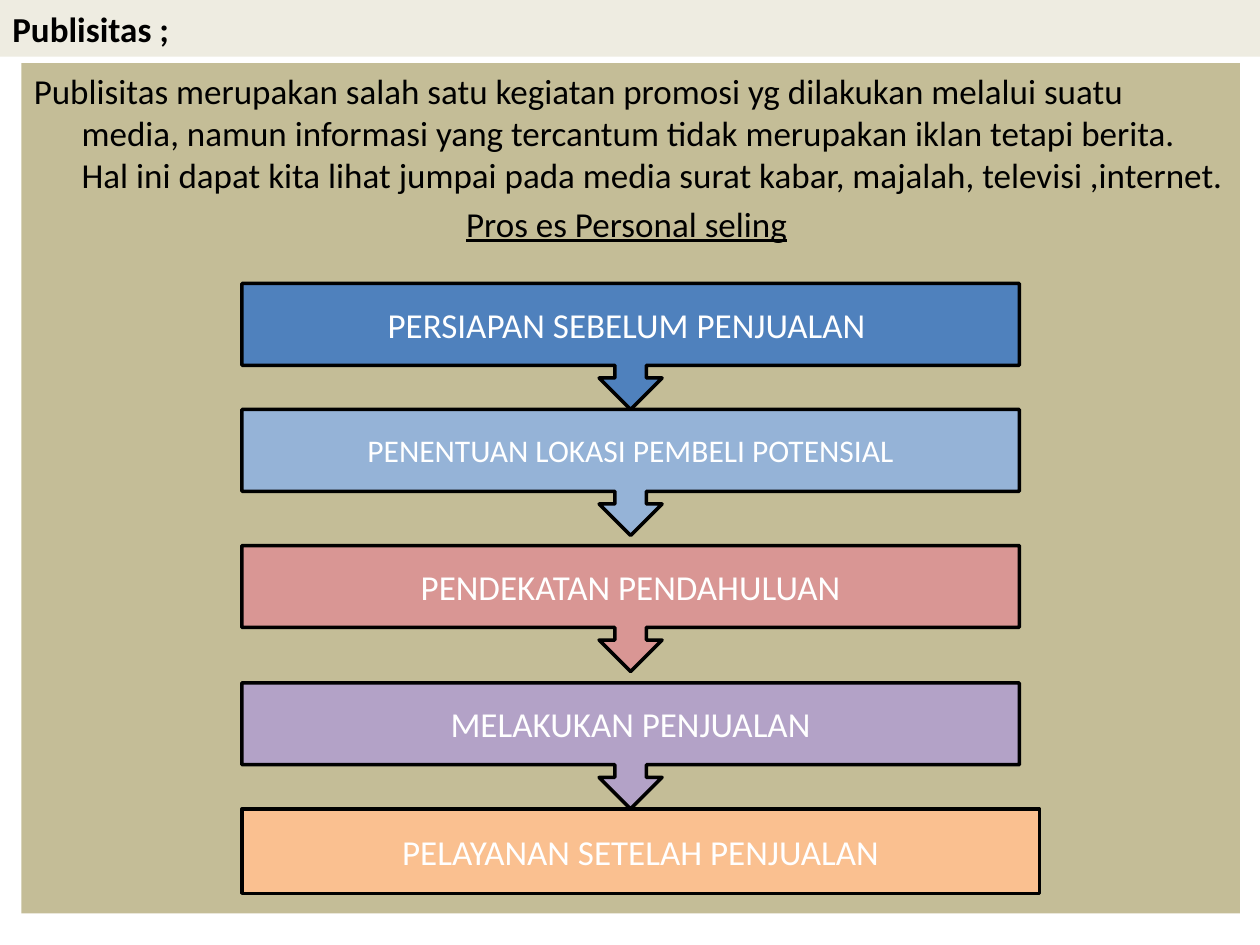
from dataclasses import dataclass

from pptx import Presentation
from pptx.dml.color import RGBColor
from pptx.enum.shapes import MSO_SHAPE
from pptx.enum.text import MSO_ANCHOR, PP_ALIGN
from pptx.util import Inches, Pt

RECTANGLE = MSO_SHAPE.RECTANGLE
CALLOUT = MSO_SHAPE.DOWN_ARROW_CALLOUT
TOP, MIDDLE = MSO_ANCHOR.TOP, MSO_ANCHOR.MIDDLE
LEFT, CENTER = PP_ALIGN.LEFT, PP_ALIGN.CENTER


@dataclass(frozen=True)
class Theme:
    font: str = "Calibri"
    text_size: int = 20
    small_size: int = 18
    outline_width: int = 2
    dark: str = "000000"
    light: str = "FFFFFF"
    title_fill: str = "EEECE1"
    body_fill: str = "C4BD97"
    step_fills: tuple = ("4F81BD", "95B3D7", "D99694", "B3A2C7", "FAC090")


class SlideBuilder:
    def __init__(self, slide, theme):
        self.slide = slide
        self.theme = theme

    def panel(self, kind, box, fill, anchor=MIDDLE, outlined=False):
        shape = self.slide.shapes.add_shape(kind, *map(Inches, box))
        shape.shadow.inherit = False
        shape.fill.solid()
        shape.fill.fore_color.rgb = RGBColor.from_string(fill)
        if outlined:
            shape.line.color.rgb = RGBColor.from_string(self.theme.dark)
            shape.line.width = Pt(self.theme.outline_width)
        else:
            shape.line.fill.background()
        shape.text_frame.word_wrap = True
        shape.text_frame.vertical_anchor = anchor
        return shape

    def add_text(self, paragraph, text, color, size=None, **font_format):
        """Add one styled run to the paragraph."""
        run = paragraph.add_run()
        run.text = text
        run.font.color.rgb = RGBColor.from_string(color)
        values = {"name": self.theme.font,
                  "size": Pt(size or self.theme.text_size), **font_format}
        for name, value in values.items():
            setattr(run.font, name, value)

    def title(self, text):
        shape = self.panel(RECTANGLE, (0, 0, 10, 0.45), self.theme.title_fill)
        paragraph = shape.text_frame.paragraphs[0]
        paragraph.alignment = LEFT
        self.add_text(paragraph, text, self.theme.dark, bold=True)

    def body(self, text, heading):
        shape = self.panel(RECTANGLE, (0.17, 0.5, 9.67, 6.75),
                           self.theme.body_fill, TOP)
        description = shape.text_frame.paragraphs[0]
        process_heading = shape.text_frame.add_paragraph()
        process_heading.space_before = Pt(4)
        for paragraph, alignment in ((description, LEFT),
                                     (process_heading, CENTER)):
            paragraph.alignment = alignment
            properties = paragraph._p.get_or_add_pPr()
            properties.set("marL", str(Inches(0.38)))
            properties.set("indent", str(Inches(-0.38)))
        self.add_text(description, text, self.theme.dark)
        self.add_text(process_heading, heading, self.theme.dark, underline=True)
        self.add_text(process_heading, " ", self.theme.dark, underline=False)

    def step(self, kind, box, fill, text, size):
        shape = self.panel(kind, box, fill, outlined=True)
        paragraph = shape.text_frame.paragraphs[0]
        paragraph.alignment = CENTER
        self.add_text(paragraph, text, self.theme.light, size)


def main():
    theme = Theme()
    presentation = Presentation()
    presentation.slide_width = Inches(10)
    presentation.slide_height = Inches(7.5)
    slide = presentation.slides.add_slide(presentation.slide_layouts[6])
    builder = SlideBuilder(slide, theme)

    builder.title("Publisitas ;")
    builder.body(
        "Publisitas merupakan salah satu kegiatan promosi yg dilakukan melalui "
        "suatu media, namun informasi yang tercantum tidak merupakan iklan "
        "tetapi berita. Hal ini dapat kita lihat jumpai pada media surat kabar, "
        "majalah, televisi ,internet.",
        "Pros es Personal seling")

    arrow_size, last_size = (6.17, 1), (6.33, 0.67)
    steps = (
        (CALLOUT, 2.25, arrow_size, "PERSIAPAN SEBELUM PENJUALAN ", theme.text_size),
        (CALLOUT, 3.25, arrow_size, "PENENTUAN LOKASI PEMBELI POTENSIAL", theme.small_size),
        (CALLOUT, 4.33, arrow_size, "PENDEKATAN PENDAHULUAN", theme.text_size),
        (CALLOUT, 5.42, arrow_size, "MELAKUKAN PENJUALAN", theme.text_size),
        (RECTANGLE, 6.42, last_size, "PELAYANAN SETELAH PENJUALAN", theme.text_size),
    )
    for (kind, top, extent, text, size), fill in zip(steps, theme.step_fills):
        builder.step(kind, (1.92, top, *extent), fill, text, size)

    presentation.save("out.pptx")


if __name__ == "__main__":
    main()
